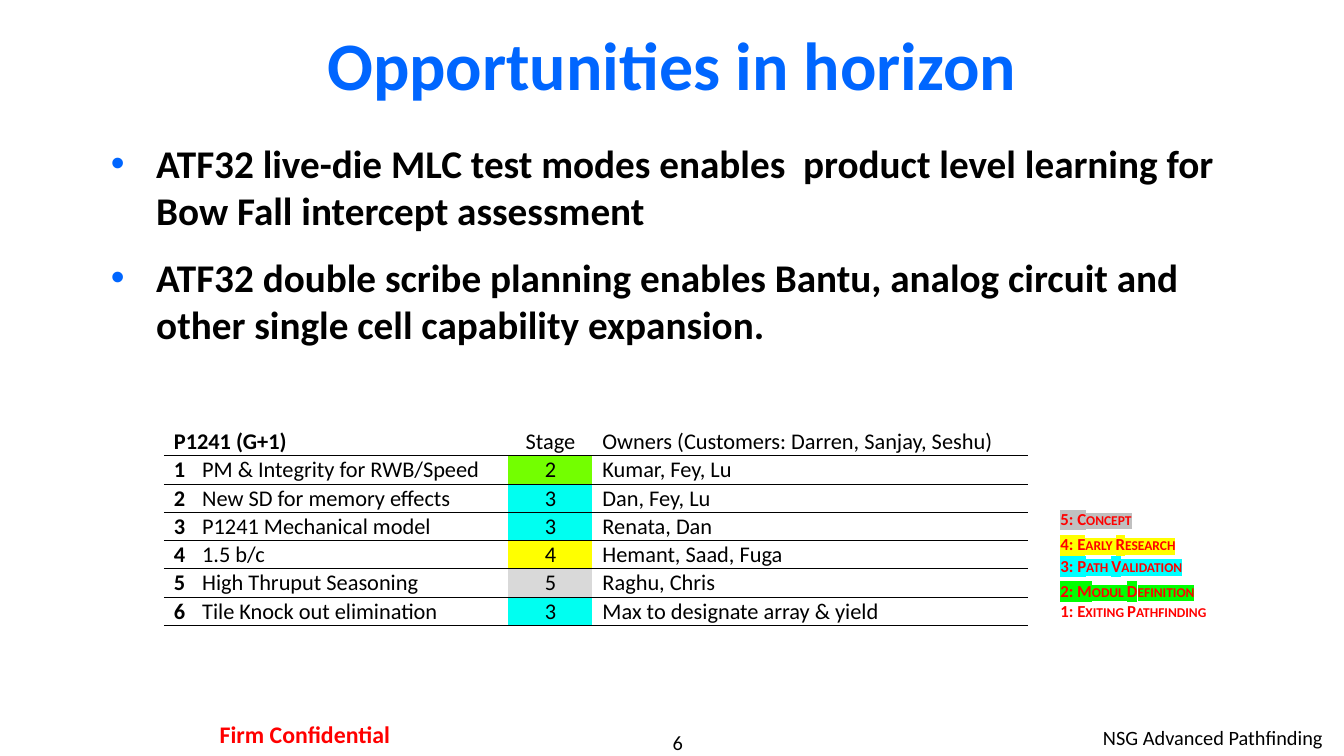
import pptx
import pptx.dml.color
import pptx.enum.text
import pptx.oxml
import pptx.oxml.ns
import pptx.util

Pt = pptx.util.Pt
Align = pptx.enum.text.PP_ALIGN
Anchor = pptx.enum.text.MSO_ANCHOR
NAMESPACE = pptx.oxml.ns.nsdecls("a")

BULLETS = [
    "ATF32 live-die MLC test modes enables  product level learning for Bow Fall intercept assessment",
    "ATF32 double scribe planning enables Bantu, analog circuit and other single cell capability expansion.",
]
HEADER = ["P1241 (G+1)", "", "Stage", "Owners (Customers: Darren, Sanjay, Seshu)"]
PROJECTS = [
    ("PM & Integrity for RWB/Speed", "2", "Kumar, Fey, Lu"),
    ("New SD for memory effects", "3", "Dan, Fey, Lu"),
    ("P1241 Mechanical model", "3", "Renata, Dan"),
    ("1.5 b/c", "4", "Hemant, Saad, Fuga"),
    ("High Thruput Seasoning", "5", "Raghu, Chris"),
    ("Tile Knock out elimination", "3", "Max to designate array & yield"),
]
STAGE_FILLS = {"2": "73FF00", "3": "00FFF1", "4": "FFFF00", "5": "D9D9D9"}
COLUMN_WIDTHS = [20.2, 226, 60, 311]
ROW_HEIGHT = 20.2
STAGES = [
    ("5: ", "Concept", "C0C0C0", 363.6, 60),
    ("4: ", "Early Research", "FFFF00", 381.6, 90),
    ("3: ", "Path Validation", "00FFFF", 396.7, 90),
    ("2: ", "Modul Definition", "00FF00", 414.7, 102),
    ("1: ", "Exiting Pathfinding", None, 429.1, 110),
]


def color(value):
    return pptx.dml.color.RGBColor.from_string(value)


def set_values(target, values):
    for name, value in values.items():
        setattr(target, name, value)


def add_span(para, text, size, fill="000000", bold=False):
    span = para.add_run()
    span.text = text
    set_values(span.font, {"name": "Calibri", "size": Pt(size), "bold": bold})
    span.font.color.rgb = color(fill)
    return span


def place(shape, left, top, width, height):
    set_values(shape, {"left": Pt(left), "top": Pt(top),
                       "width": Pt(width), "height": Pt(height)})


def set_margins(frame, horizontal, vertical):
    set_values(frame, {"margin_left": Pt(horizontal), "margin_right": Pt(horizontal),
                       "margin_top": Pt(vertical), "margin_bottom": Pt(vertical)})


def add_box(page, bounds, align=Align.LEFT, margins=(0, 0)):
    box = page.shapes.add_textbox(*map(Pt, bounds))
    box.text_frame.word_wrap = True
    set_margins(box.text_frame, *margins)
    para = box.text_frame.paragraphs[0]
    para.alignment = align
    return para


def fill_title(page):
    title = page.shapes.title
    place(title, 72, 12.2, 816, 66.2)
    set_values(title.text_frame, {"vertical_anchor": Anchor.MIDDLE, "word_wrap": True,
                                  "auto_size": pptx.enum.text.MSO_AUTO_SIZE.NONE})
    para = title.text_frame.paragraphs[0]
    para.alignment = Align.CENTER
    add_span(para, "Opportunities in horizon", 48.5, "0066FF", True)


def add_bullet(para):
    properties = para._p.get_or_add_pPr()
    set_values(para, {"alignment": Align.LEFT})
    properties.set("marL", str(Pt(32.4)))
    properties.set("indent", str(-Pt(32.4)))
    for markup in ('<a:buClr {}><a:srgbClr val="0066FF"/></a:buClr>',
                   '<a:buFont {} typeface="Arial"/>',
                   '<a:buChar {} char="•"/>'):
        properties.append(pptx.oxml.parse_xml(markup.format(NAMESPACE)))


def fill_body(page):
    body = page.placeholders[1]
    place(body, 72, 96, 816, 384)
    frame = body.text_frame
    set_values(frame, {"word_wrap": True, "vertical_anchor": Anchor.TOP,
                       "auto_size": pptx.enum.text.MSO_AUTO_SIZE.NONE})
    for index, text in enumerate(BULLETS):
        para = frame.add_paragraph() if index else frame.paragraphs[0]
        add_bullet(para)
        para.space_before = Pt(14 if index else 0)
        add_span(para, text, 28, bold=True)


def add_borders(cell, has_top):
    properties = cell._tc.get_or_add_tcPr()
    for side, visible in {"L": False, "R": False, "T": has_top, "B": True}.items():
        paint = '<a:solidFill><a:srgbClr val="000000"/></a:solidFill>' if visible else "<a:noFill/>"
        properties.append(pptx.oxml.parse_xml(
            f'<a:ln{side} {NAMESPACE} w="{Pt(0.5)}">{paint}</a:ln{side}>'))


def fill_cell(cell, text, row, column):
    set_margins(cell, 7.2, 0)
    set_values(cell, {"margin_top": Pt(0.7), "vertical_anchor": Anchor.MIDDLE})
    add_borders(cell, row > 0)
    if row and column == 2:
        cell.fill.solid()
        cell.fill.fore_color.rgb = color(STAGE_FILLS[text])
    else:
        cell.fill.background()
    para = cell.text_frame.paragraphs[0]
    centered = column == 2 or (row and column == 0)
    para.alignment = Align.CENTER if centered else Align.LEFT
    if text:
        add_span(para, text, 16, bold=column == 0)


def add_project_table(page):
    rows = [HEADER] + [(str(number), *project) for number, project in enumerate(PROJECTS, 1)]
    table = page.shapes.add_table(
        len(rows), len(COLUMN_WIDTHS), Pt(117), Pt(305.3),
        Pt(sum(COLUMN_WIDTHS)), Pt(ROW_HEIGHT * len(rows))).table
    set_values(table, {"first_row": False, "horz_banding": False})
    for column, width in zip(table.columns, COLUMN_WIDTHS):
        column.width = Pt(width)
    for row_index, texts in enumerate(rows):
        table.rows[row_index].height = Pt(ROW_HEIGHT)
        for column_index, text in enumerate(texts):
            fill_cell(table.cell(row_index, column_index), text, row_index, column_index)
    table.cell(0, 0).merge(table.cell(0, 1))


def add_highlight(span, value):
    fill = span._r.get_or_add_rPr().find(pptx.oxml.ns.qn("a:solidFill"))
    fill.addnext(pptx.oxml.parse_xml(
        f'<a:highlight {NAMESPACE}><a:srgbClr val="{value}"/></a:highlight>'))


def add_stage_legend(page):
    for number, label, highlight, top, width in STAGES:
        para = add_box(page, (757.4, top, width, 14.4))
        spans = [add_span(para, text, 12, "FF0000", True) for text in (number, label)]
        spans[1]._r.get_or_add_rPr().set("cap", "small")
        if highlight:
            for span in spans:
                add_highlight(span, highlight)


def add_footer(page):
    para = add_box(page, (400.3, 521.3, 167.8, 17.3), Align.CENTER)
    add_span(para, "6", 14.5)
    para = add_box(page, (635.8, 514.8, 316, 25.2), Align.RIGHT, (7.2, 3.6))
    add_span(para, "NSG Advanced Pathfinding", 14.5)
    para = add_box(page, (111.6, 509.8, 212.4, 29.5), Align.CENTER, (8.6, 4.3))
    add_span(para, "Firm Confidential", 17, "FF0000", True)


def main():
    deck = pptx.Presentation()
    set_values(deck, {"slide_width": Pt(960), "slide_height": Pt(540)})
    page = deck.slides.add_slide(deck.slide_layouts[1])
    add_footer(page)
    fill_title(page)
    fill_body(page)
    add_project_table(page)
    add_stage_legend(page)
    deck.save("out.pptx")


if __name__ == "__main__":
    main()
